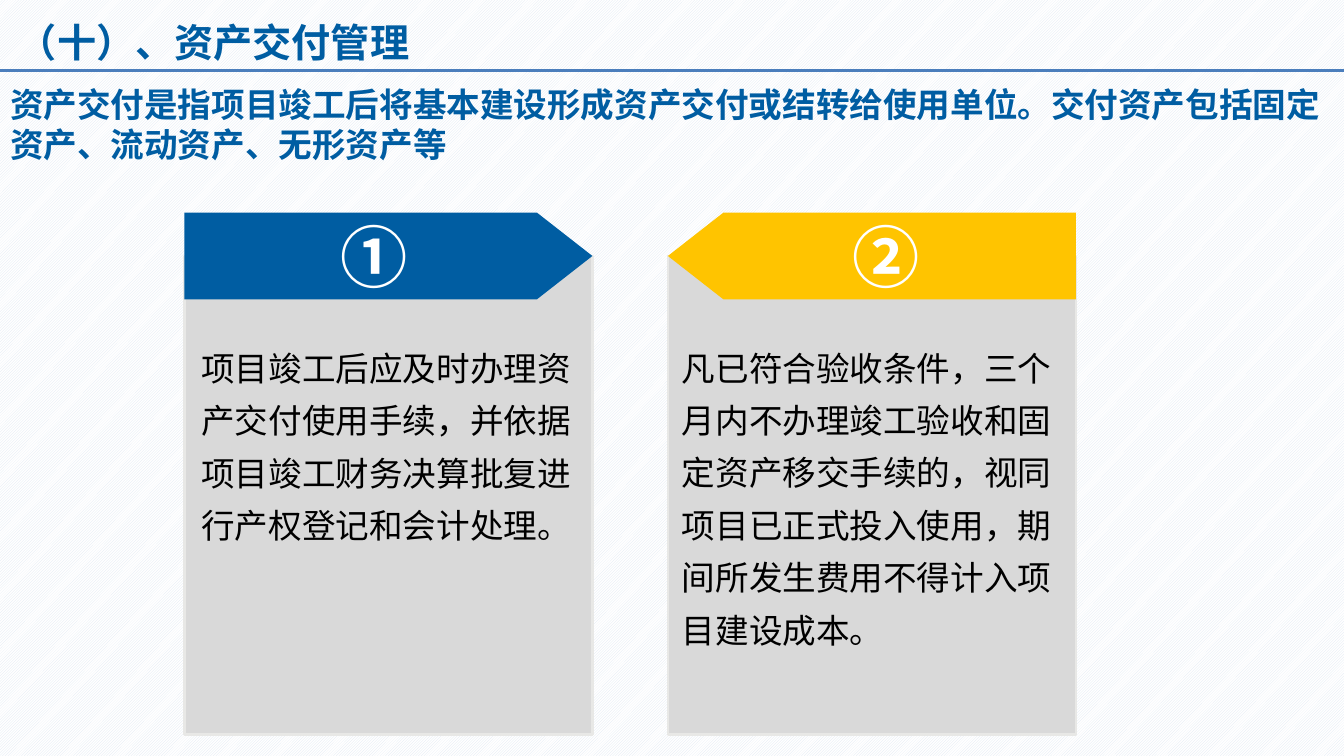
"""Build the slide on managing the handover of project assets."""
import pptx
import pptx.dml.color
import pptx.enum.dml
import pptx.enum.shapes
import pptx.enum.text
import pptx.oxml.ns
import pptx.util
from lxml import etree

PX = 9144
BLUE, YELLOW, GREY, BLACK, WHITE = "005DA2", "FFC400", "D9D9D9", "000000", "FFFFFF"
CENTER = pptx.enum.text.PP_ALIGN.CENTER
LEFT = pptx.enum.text.PP_ALIGN.LEFT
SHAPES = pptx.enum.shapes.MSO_SHAPE


def color(value):
    return pptx.dml.color.RGBColor.from_string(value)


class Page:
    font_name = "Noto Sans CJK SC"

    def __init__(self, deck):
        self.slide = deck.slides.add_slide(deck.slide_layouts[1])

    def background(self, fore, back):
        fill = self.slide.background.fill
        fill.patterned()
        fill.pattern = pptx.enum.dml.MSO_PATTERN.LIGHT_UPWARD_DIAGONAL
        fill.fore_color.rgb = color(fore)
        fill.back_color.rgb = color(back)

    def set_text(self, box, text, size, ink, bold=False, align=LEFT, spacing=1.0):
        box.text_frame.text = text
        para = box.text_frame.paragraphs[0]
        para.alignment = align
        para.line_spacing = spacing
        para.space_before = pptx.util.Pt(0)
        for span in para.runs:
            span.font.size = pptx.util.Pt(size)
            span.font.bold = bold
            span.font.color.rgb = color(ink)
            span.font.name = self.font_name
            east_asian = etree.SubElement(span.font._element, pptx.oxml.ns.qn("a:ea"))
            east_asian.set("typeface", self.font_name)
        return para

    def fit(self, box):
        frame = box.text_frame
        frame.word_wrap = True
        frame.vertical_anchor = pptx.enum.text.MSO_ANCHOR.TOP
        frame.auto_size = pptx.enum.text.MSO_AUTO_SIZE.SHAPE_TO_FIT_TEXT

    def placeholder(self, index, left, top, width, height, text, size, align):
        box = self.slide.placeholders[index]
        box.left, box.top, box.width, box.height = (
            length * PX for length in (left, top, width, height))
        self.fit(box)
        return self.set_text(box, text, size, BLUE, True, align)

    def title(self, *place, text):
        self.placeholder(0, *place, text, 28, CENTER)

    def body(self, *place, text):
        para = self.placeholder(1, *place, text, 24, LEFT)
        properties = para._p.get_or_add_pPr()
        properties.set("marL", "0")
        properties.set("indent", "0")
        etree.SubElement(properties, pptx.oxml.ns.qn("a:buNone"))

    def text(self, left, top, width, height, text):
        box = self.slide.shapes.add_textbox(left * PX, top * PX, width * PX, height * PX)
        self.fit(box)
        self.set_text(box, text, 24, BLACK, spacing=1.3)

    def shape(self, kind, left, top, width, height, fill, line=None):
        box = self.slide.shapes.add_shape(kind, left * PX, top * PX, width * PX, height * PX)
        box.shadow.inherit = False
        box.fill.solid()
        box.fill.fore_color.rgb = color(fill)
        if line:
            box.line.color.rgb = color(line)
            box.line.width = pptx.util.Pt(2)
        else:
            box.line.fill.background()
        return box

    def banner(self, left, top, width, height, fill, text, flipped):
        box = self.shape(SHAPES.PENTAGON, left, top, width, height, fill)
        box.adjustments[0] = 0.64
        if flipped:
            box._element.spPr.xfrm.set("flipH", "1")
        box.text_frame.word_wrap = False
        box.text_frame.vertical_anchor = pptx.enum.text.MSO_ANCHOR.MIDDLE
        self.set_text(box, text, 48, WHITE, True, CENTER)

    def rule(self, left, right, top, ink, weight):
        line = self.slide.shapes.add_connector(
            pptx.enum.shapes.MSO_CONNECTOR.STRAIGHT, left * PX, top * PX, right * PX, top * PX)
        line.line.color.rgb = color(ink)
        line.line.width = pptx.util.Pt(weight)
        etree.SubElement(line._element.spPr, pptx.oxml.ns.qn("a:effectLst"))


def main():
    deck = pptx.Presentation()
    deck.slide_width, deck.slide_height = 1334 * PX, 750 * PX
    page = Page(deck)
    page.background("DCE6F2", WHITE)
    page.title(-1, 13, 426, 57, text="（十）、资产交付管理")
    page.rule(0, 1334, 70, "4B7EBC", 2.25)
    page.body(0, 78, 1334, 91, text="资产交付是指项目竣工后将基本建设形成资产交付或结转给使用单位。"
              "交付资产包括固定资产、流动资产、无形资产等")
    cards = [
        (183, 190, 215, BLUE, "①", False,
         "项目竣工后应及时办理资产交付使用手续，并依据项目竣工财务决算批复进行产权登记和会计处理。"),
        (663, 667, 320, YELLOW, "②", True,
         "凡已符合验收条件，三个月内不办理竣工验收和固定资产移交手续的，"
         "视同项目已正式投入使用，期间所发生费用不得计入项目建设成本。"),
    ]
    for left, text_left, text_height, fill, number, flipped, text in cards:
        page.shape(SHAPES.RECTANGLE, left, 254, 405, 475, GREY, "E8E8E6")
        page.banner(left, 211, 405, 86, fill, number, flipped)
        page.text(text_left, 328, 389, text_height, text)
    deck.save("out.pptx")


if __name__ == "__main__":
    main()
